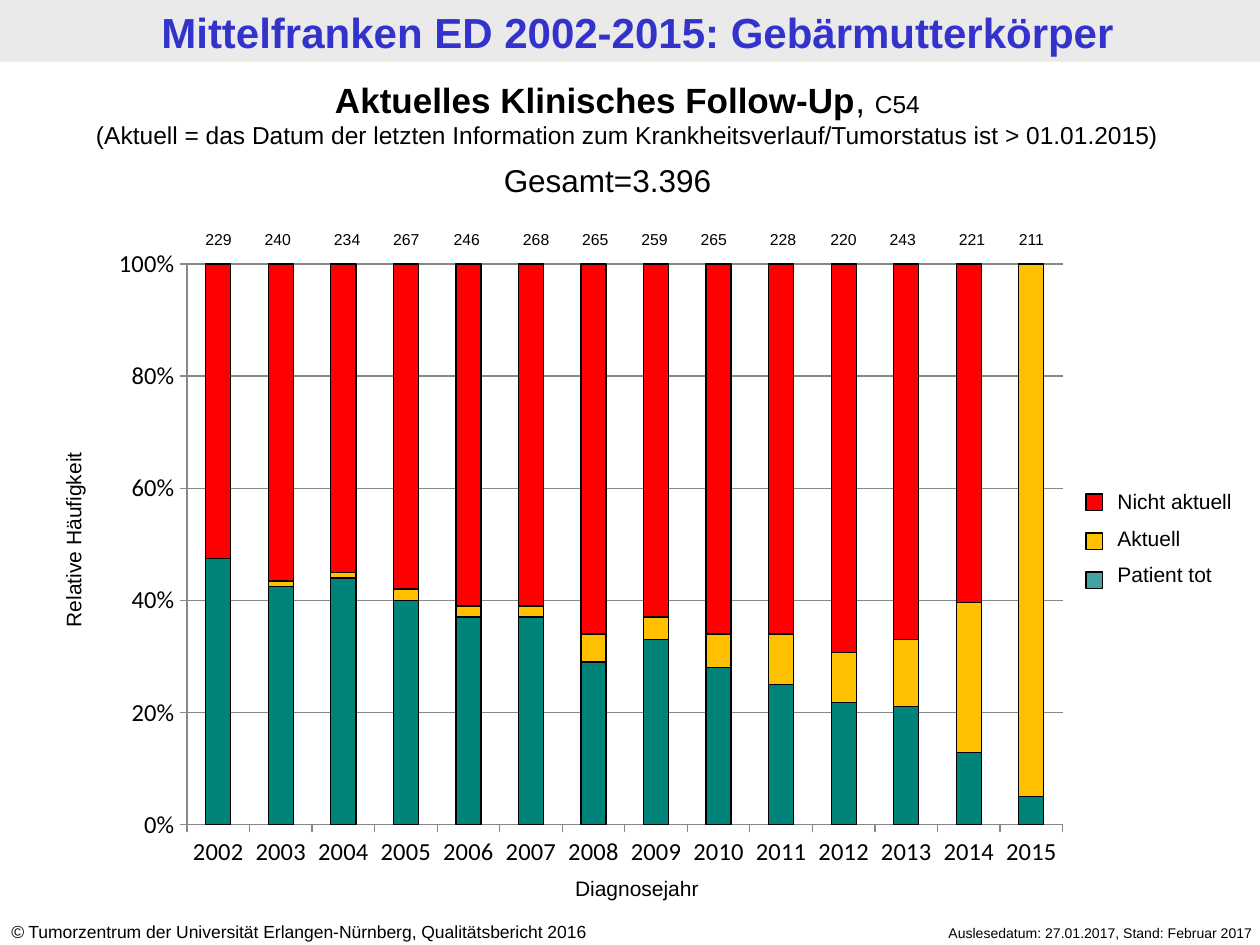
from lxml import etree
from pptx import Presentation
from pptx.chart.data import CategoryChartData
from pptx.dml.color import RGBColor
from pptx.enum.chart import XL_CHART_TYPE, XL_TICK_MARK
from pptx.enum.shapes import MSO_SHAPE
from pptx.enum.text import MSO_ANCHOR, PP_ALIGN
from pptx.oxml import parse_xml
from pptx.oxml.ns import nsdecls, qn
from pptx.util import Inches, Pt

LEFT, CENTER, RIGHT = PP_ALIGN.LEFT, PP_ALIGN.CENTER, PP_ALIGN.RIGHT
MIDDLE, TOP = MSO_ANCHOR.MIDDLE, MSO_ANCHOR.TOP
RECTANGLE = MSO_SHAPE.RECTANGLE
STACKED = XL_CHART_TYPE.COLUMN_STACKED_100
TICK_OUTSIDE = XL_TICK_MARK.OUTSIDE

COLORS = {
    "band": "EAEAEA", "title": "3333CC", "text": "000000", "axis": "878787",
    "dead": "008378", "dead_key": "008380", "current": "FFC000", "outdated": "FF0000",
}
YEARS = [str(year) for year in range(2002, 2016)]
SERIES = [
    ("Patient tot", "dead", [47, 42, 44, 40, 37, 37, 29, 33, 28, 25, 22, 21, 13, 5]),
    ("Aktuell", "current", [0, 1, 1, 2, 2, 2, 5, 4, 6, 9, 9, 12, 27, 95]),
    ("Nicht aktuell", "outdated", [52, 56, 55, 58, 61, 61, 66, 63, 66, 66, 70, 67, 61, 0]),
]
COUNTS = [
    (229, 1.46), (240, 1.93), (234, 2.48), (267, 2.95), (246, 3.43), (268, 3.98), (265, 4.45),
    (259, 4.92), (265, 5.39), (228, 5.94), (220, 6.42), (243, 6.89), (221, 7.44), (211, 7.91),
]


def color(name):
    return RGBColor.from_string(COLORS[name])


def inches(box):
    return [Inches(length) for length in box]


def write_text(frame, paragraphs, size=12, align=LEFT, name="text", bold=False,
               anchor=TOP, gap=0):
    frame.word_wrap = True
    frame.vertical_anchor = anchor
    for index, runs in enumerate(paragraphs):
        paragraph = frame.paragraphs[0] if index == 0 else frame.add_paragraph()
        paragraph.alignment = align
        paragraph.space_before = Pt(gap if index else 0)
        for text, changes in runs:
            run = paragraph.add_run()
            run.text = text
            run.font.name = "Arial"
            run.font.size = Pt(changes.get("size", size))
            run.font.bold = changes.get("bold", bold)
            run.font.italic = changes.get("italic", False)
            run.font.color.rgb = color(name)


def add_text(slide, box, paragraphs, **formatting):
    shape = slide.shapes.add_textbox(*inches(box))
    if isinstance(paragraphs, str):
        paragraphs = [[(paragraphs, {})]]
    write_text(shape.text_frame, paragraphs, **formatting)
    return shape


def add_rectangle(slide, box, fill, outlined=False):
    shape = slide.shapes.add_shape(RECTANGLE, *inches(box))
    shape.shadow.inherit = False
    shape.fill.solid()
    shape.fill.fore_color.rgb = color(fill)
    if outlined:
        shape.line.color.rgb = color("text")
        shape.line.width = Pt(0.75)
    else:
        shape.line.fill.background()
    return shape


def add_header(slide, box):
    left, top, width, height = box
    title = slide.shapes.title
    title.left, title.top, title.width, title.height = inches((left + 0.06, top + 0.01, width, height))
    frame = title.text_frame
    frame.margin_top = frame.margin_bottom = Inches(0.04)
    write_text(frame, [[("Mittelfranken ED 2002-2015: Gebärmutterkörper", {})]],
               size=24, align=CENTER, name="title", bold=True, anchor=MIDDLE)
    band = add_rectangle(slide, box, "band")
    title._element.addprevious(band._element)


def add_heading(slide, box):
    left, top, width, height = box
    add_text(slide, (left, top, width, 0.67), [
        [("Aktuelles Klinisches Follow-Up", {"bold": True, "size": 20}),
         (", ", {"size": 20}), ("C54", {})],
        [("(Aktuell = das Datum der letzten Information zum Krankheitsverlauf/"
          "Tumorstatus ist > 01.01.2015)", {})],
    ], size=14, align=CENTER)
    add_text(slide, (3.9, top + height - 0.4, 2.2, 0.4), "Gesamt=3.396", size=18)


def set_plot_layout(chart, x, y, width, height):
    layout = parse_xml(
        f'<c:layout {nsdecls("c")}><c:manualLayout><c:layoutTarget val="inner"/>'
        f'<c:xMode val="edge"/><c:yMode val="edge"/><c:x val="{x}"/><c:y val="{y}"/>'
        f'<c:w val="{width}"/><c:h val="{height}"/></c:manualLayout></c:layout>')
    plot_area = chart._chartSpace.chart.plotArea
    for previous in plot_area.findall(qn("c:layout")):
        plot_area.remove(previous)
    plot_area.insert(0, layout)


def add_follow_up_chart(slide, box):
    data = CategoryChartData()
    data.categories = YEARS
    for name, _, values in SERIES:
        data.add_series(name, values)
    chart = slide.shapes.add_chart(STACKED, *inches(box), data).chart
    chart.has_legend = False
    chart.has_title = False
    chart.font.name = "Calibri"
    chart.font.size = Pt(14)
    chart.font.color.rgb = color("text")
    set_plot_layout(chart, 0.089, 0.044, 0.891, 0.871)

    plot = chart.plots[0]
    plot.gap_width, plot.overlap, plot.vary_by_categories = 150, 100, False
    for series, (_, fill, _) in zip(plot.series, SERIES):
        series.format.fill.solid()
        series.format.fill.fore_color.rgb = color(fill)
        series.format.line.color.rgb = color("text")
        series.format.line.width = Pt(0.75)

    value_axis = chart.value_axis
    value_axis.minimum_scale, value_axis.maximum_scale, value_axis.major_unit = 0, 1, 0.2
    value_axis.tick_labels.number_format = "0%"
    value_axis.tick_labels.number_format_is_linked = False
    value_axis.has_major_gridlines = True
    for axis in (value_axis, chart.category_axis):
        axis.major_tick_mark = TICK_OUTSIDE
        axis.tick_labels.font.size = Pt(14)
    for part in (value_axis, chart.category_axis, value_axis.major_gridlines):
        part.format.line.color.rgb = color("axis")
        part.format.line.width = Pt(0.75)


def add_chart_labels(slide, box):
    left, top, width, height = box
    axis_label = add_text(slide, (left - 1.41, top + 2.26, 2.41, 0.31),
                          "Relative Häufigkeit", align=CENTER)
    axis_label.rotation = 270
    add_text(slide, (left + 3.14, top + height - 0.08, 2.25, 0.31), "Diagnosejahr", align=CENTER)
    for count, count_left in COUNTS:
        add_text(slide, (count_left, top - 0.1, 0.55, 0.25), str(count), size=9, align=CENTER)


def add_legend(slide, box):
    left, top, width, height = box
    entries = list(reversed(SERIES))
    add_text(slide, (left + 0.15, top, width - 0.15, height),
             [[(name, {})] for name, _, _ in entries], gap=6.5)
    for index, (_, fill, _) in enumerate(entries):
        key_fill = "dead_key" if fill == "dead" else fill
        key = add_rectangle(slide, (left, top + 0.09 + index * 0.31, 0.13, 0.13), key_fill, True)
        if fill == "dead":
            fill_color = key._element.spPr.find(qn("a:solidFill"))[0]
            etree.SubElement(fill_color, qn("a:alpha")).set("val", "74000")


def add_footer(slide, box):
    left, top, width, height = box
    add_text(slide, (left, top, 5.24, height), [[
        ("©", {"italic": True}),
        (" Tumorzentrum der Universität Erlangen-Nürnberg, Qualitätsbericht 2016", {}),
    ]], size=10)
    add_text(slide, (left + width - 3.39, top + 0.03, 3.39, 0.24),
             "Auslesedatum: 27.01.2017, Stand: Februar 2017", size=8, align=RIGHT)


def main():
    presentation = Presentation()
    presentation.slide_width, presentation.slide_height = Inches(10), Inches(7.5)
    slide = presentation.slides.add_slide(presentation.slide_layouts[5])
    chart_box = (0.79, 1.87, 7.8, 5.11)
    add_header(slide, (0, 0, 10, 0.49))
    add_footer(slide, (-0.01, 7.26, 10.05, 0.27))
    add_follow_up_chart(slide, chart_box)
    add_chart_labels(slide, chart_box)
    add_legend(slide, (8.62, 3.83, 1.57, 0.91))
    add_heading(slide, (-0.04, 0.57, 10.04, 1.06))
    presentation.save("out.pptx")


if __name__ == "__main__":
    main()
